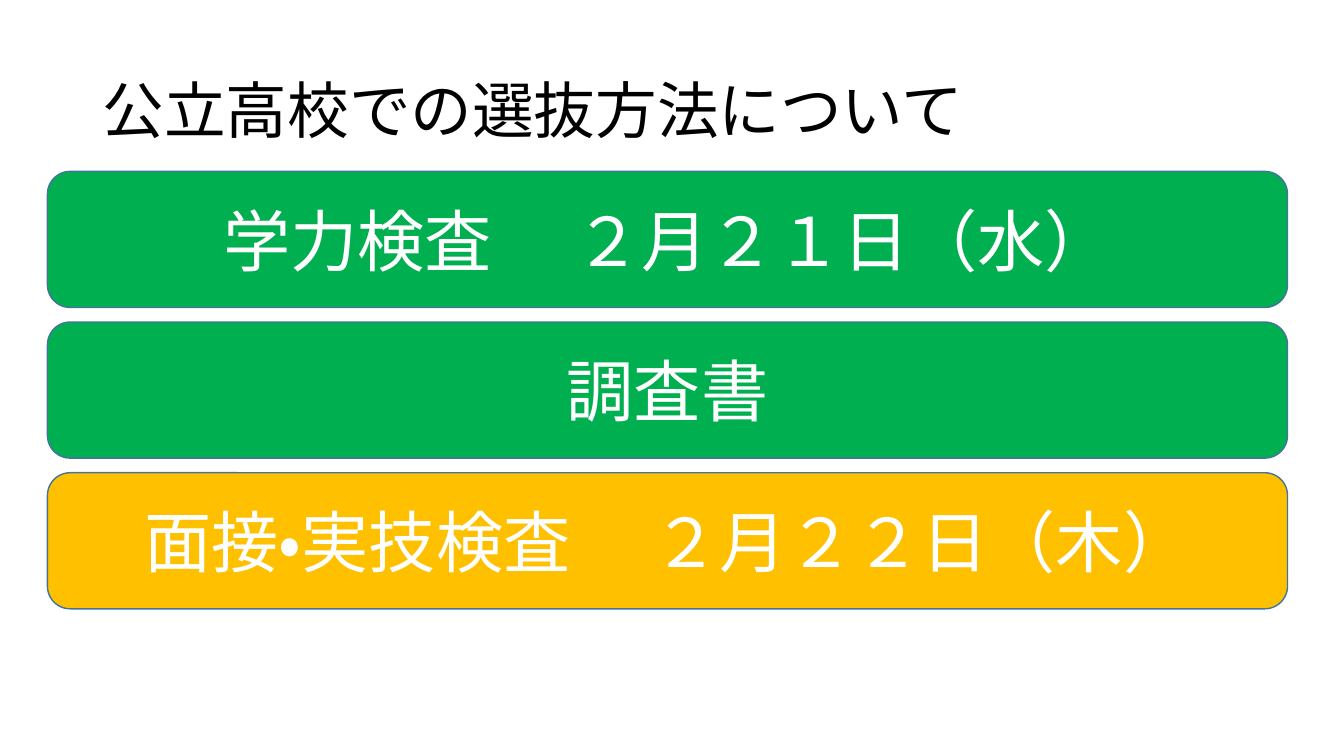
import dataclasses

import pptx
import pptx.dml.color
import pptx.enum.lang
import pptx.enum.shapes
import pptx.enum.text
import pptx.util

WIDTH, HEIGHT = pptx.util.Inches(13.33), pptx.util.Inches(7.5)
FONT = "Calibri"
GREEN, AMBER, OUTLINE = "00B050", "FFC000", "43739E"
WHITE, BLACK = "FFFFFF", "000000"

# Shares of the slide, in percent
BAR_LEFT, BAR_WIDTH, BAR_HEIGHT = 3.53, 92.27, 18
BAR_TOP, BAR_PITCH = 22.67, 19.93


@dataclasses.dataclass
class Bar:
    row: int
    text: str
    fill: str


# Back to front: the upper bars lie in front
BARS = [
    Bar(2, "面接・実技検査　 ２月２２日（木）", AMBER),
    Bar(1, "調査書", GREEN),
    Bar(0, "学力検査　 ２月２１日（水）", GREEN),
]


def color(value: str) -> pptx.dml.color.RGBColor:
    return pptx.dml.color.RGBColor.from_string(value)


def box(left: float, top: float, width: float, height: float) -> list[int]:
    return [round(share * size / 100) for share, size in
            ((left, WIDTH), (top, HEIGHT), (width, WIDTH), (height, HEIGHT))]


def write(s, text: str, size: int, ink: str, **paragraph_format) -> None:
    tf = s.text_frame
    tf.word_wrap = True
    tf.vertical_anchor = pptx.enum.text.MSO_ANCHOR.MIDDLE
    p = tf.paragraphs[0]
    for name, value in paragraph_format.items():
        setattr(p, name, value)
    r = p.add_run()
    r.text = text
    font_format = {
        "name": FONT,
        "size": pptx.util.Pt(size),
        "language_id": pptx.enum.lang.MSO_LANGUAGE_ID.JAPANESE,
    }
    for name, value in font_format.items():
        setattr(r.font, name, value)
    r.font.color.rgb = color(ink)


def draw_bar(slide, bar: Bar) -> None:
    s = slide.shapes.add_shape(
        pptx.enum.shapes.MSO_SHAPE.ROUNDED_RECTANGLE,
        *box(BAR_LEFT, BAR_TOP + bar.row * BAR_PITCH, BAR_WIDTH, BAR_HEIGHT))
    s.shadow.inherit = False
    s.fill.solid()
    s.fill.fore_color.rgb = color(bar.fill)
    s.line.color.rgb = color(OUTLINE)
    s.line.width = pptx.util.Pt(1)
    write(s, bar.text, 48, WHITE, alignment=pptx.enum.text.PP_ALIGN.CENTER)


def main() -> None:
    prs = pptx.Presentation()
    prs.slide_width, prs.slide_height = WIDTH, HEIGHT
    slide = prs.slides.add_slide(prs.slide_layouts[6])

    # Title
    title = slide.shapes.add_textbox(*box(6.9, 5.33, 86.27, 19.33))
    write(title, "公立高校での選抜方法について", 44, BLACK, line_spacing=0.9)

    # Selection methods
    for bar in BARS:
        draw_bar(slide, bar)

    prs.save("out.pptx")


if __name__ == "__main__":
    main()
